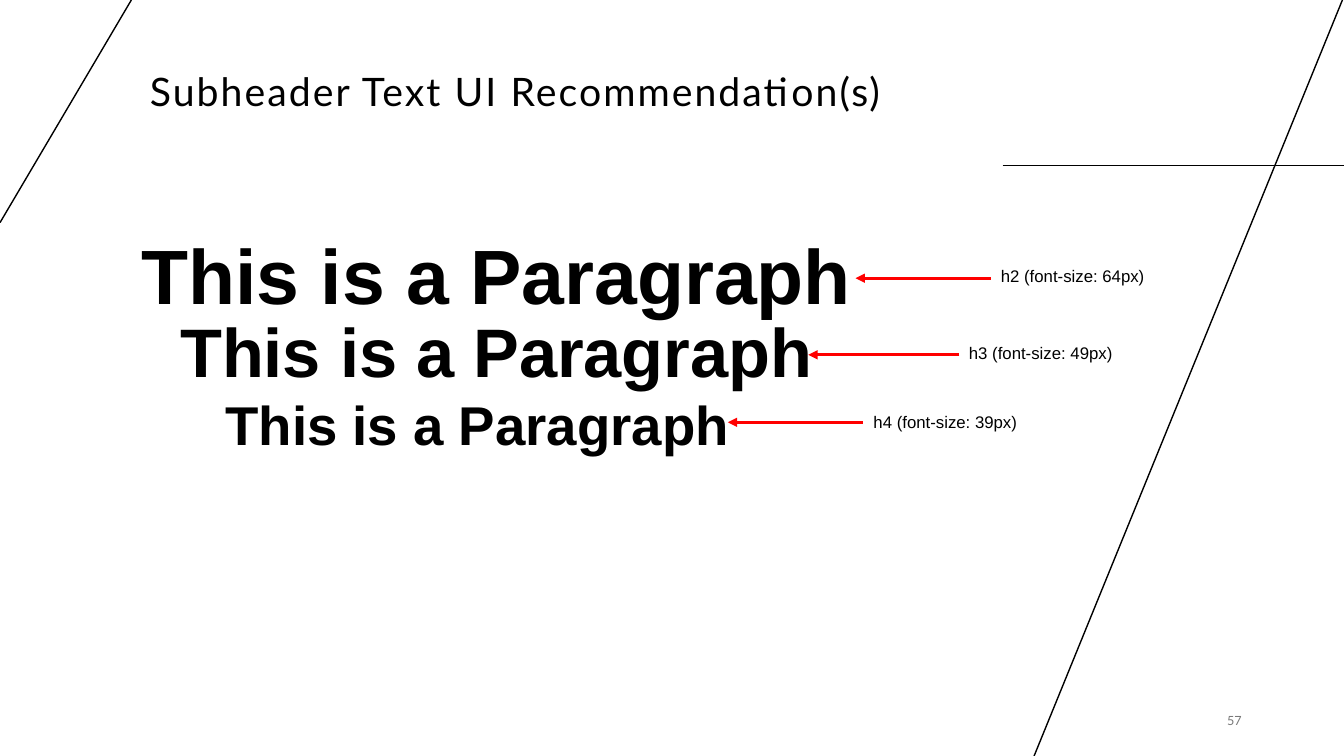
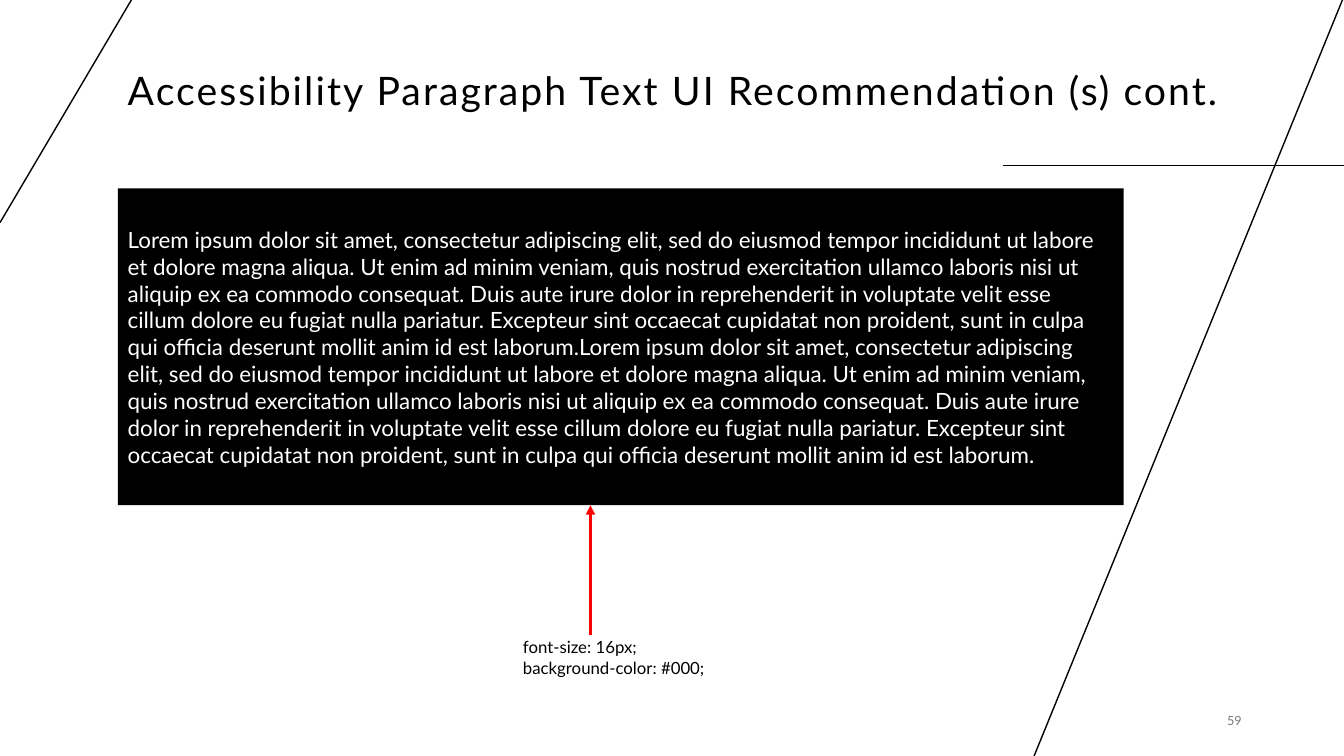
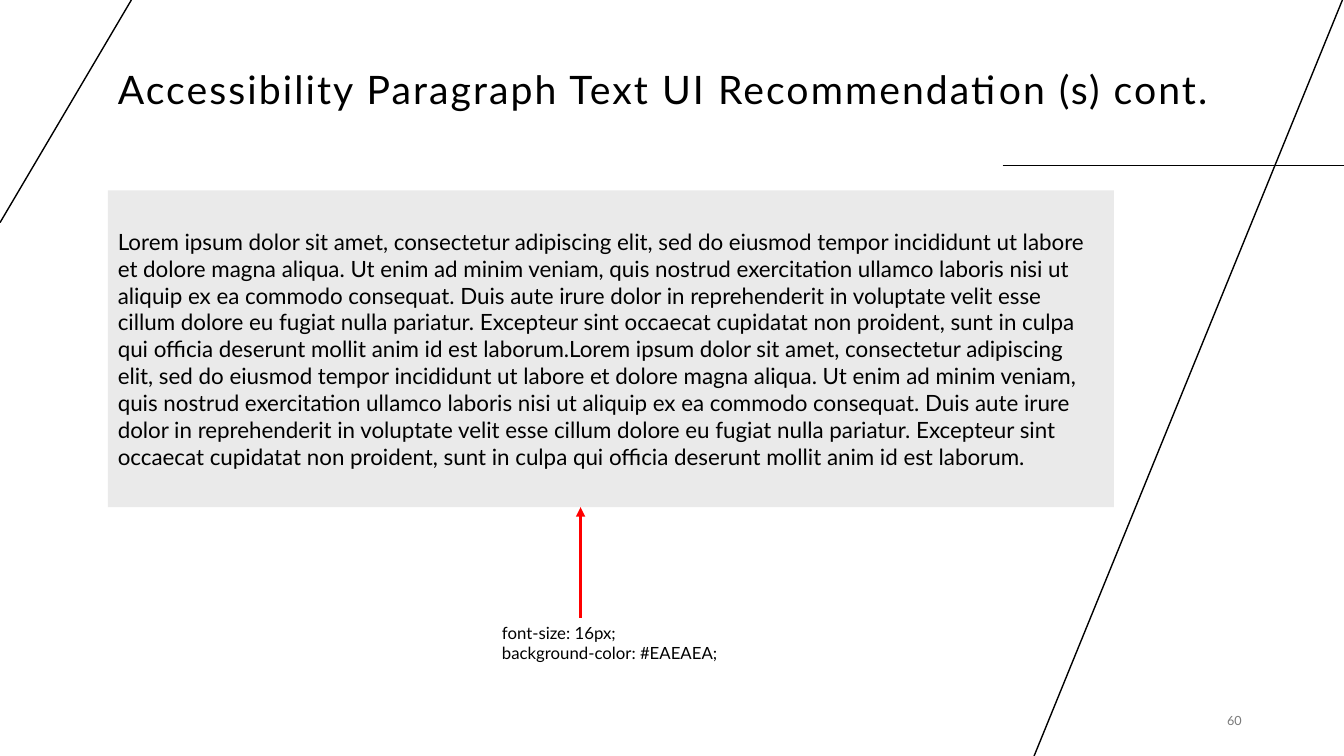
from lxml import etree
from pptx import Presentation
from pptx.dml.color import RGBColor
from pptx.enum.shapes import MSO_CONNECTOR as Connector, MSO_SHAPE as Shape
from pptx.enum.text import MSO_ANCHOR as Anchor, PP_ALIGN as Align
from pptx.oxml.ns import qn
from pptx.util import Cm, Pt

BLACK = RGBColor(0x00, 0x00, 0x00)
WHITE = RGBColor(0xFF, 0xFF, 0xFF)
RED = RGBColor(0xFF, 0x00, 0x00)
GREY = RGBColor(0x79, 0x79, 0x79)
PALE = RGBColor(0xEA, 0xEA, 0xEA)
WIDTH, HEIGHT = 33.87, 19.05

LOREM = (
    "Lorem ipsum dolor sit amet, consectetur adipiscing elit, sed do eiusmod "
    "tempor incididunt ut labore et dolore magna aliqua. Ut enim ad minim veniam, "
    "quis nostrud exercitation ullamco laboris nisi ut aliquip ex ea commodo "
    "consequat. Duis aute irure dolor in reprehenderit in voluptate velit esse "
    "cillum dolore eu fugiat nulla pariatur. Excepteur sint occaecat cupidatat "
    "non proident, sunt in culpa qui officia deserunt mollit anim id est laborum."
)


class Deck:
    """Holds the shared style and the current slide; lengths are centimetres."""

    def __init__(self):
        self.presentation = Presentation()
        self.presentation.slide_width = Cm(WIDTH)
        self.presentation.slide_height = Cm(HEIGHT)
        self.slide = None

    def new_slide(self, title, title_box, number):
        layout = self.presentation.slide_layouts[6]
        self.slide = self.presentation.slides.add_slide(layout)
        # Decorative lines
        self.line((25.27, 4.17), (WIDTH, 4.17))
        self.line((33.83, 0), (26.06, HEIGHT))
        self.line((0, 5.61), (3.31, 0))
        # Title and slide number
        self.text(title_box, [title], 28, anchor=Anchor.BOTTOM,
                  line_spacing=0.9, letter_spacing=1.5)
        self.text((28.8, 17.65, 2.74, 1.02), [str(number)], 9, color=GREY,
                  align=Align.RIGHT, anchor=Anchor.MIDDLE)

    def line(self, start, end, color=BLACK, width=1):
        connector = self.slide.shapes.add_connector(
            Connector.STRAIGHT, *map(Cm, start + end))
        connector.line.color.rgb = color
        connector.line.width = Pt(width)
        etree.SubElement(connector._element.spPr, qn("a:effectLst"))
        return connector

    def arrow(self, start, end):
        connector = self.line(start, end, RED, 2.25)
        outline = connector._element.spPr.find(qn("a:ln"))
        etree.SubElement(outline, qn("a:tailEnd"), type="triangle")

    def text(self, box, lines, size, **style):
        shape = self.slide.shapes.add_textbox(*map(Cm, box))
        self.fill_text(shape, lines, size, **style)

    def panel(self, box, text, fill, color):
        shape = self.slide.shapes.add_shape(Shape.RECTANGLE, *map(Cm, box))
        shape.shadow.inherit = False
        shape.fill.solid()
        shape.fill.fore_color.rgb = fill
        shape.line.fill.background()
        self.fill_text(shape, [text], 16, color=color, anchor=Anchor.MIDDLE)

    def fill_text(self, shape, lines, size, font="Lato", color=BLACK, bold=False,
                  align=Align.LEFT, anchor=Anchor.TOP, line_spacing=None,
                  letter_spacing=None):
        frame = shape.text_frame
        frame.word_wrap = True
        frame.vertical_anchor = anchor
        for index, line in enumerate(lines):
            paragraph = frame.add_paragraph() if index else frame.paragraphs[0]
            paragraph.alignment = align
            if line_spacing:
                paragraph.line_spacing = line_spacing
            run = paragraph.add_run()
            run.text = line
            run.font.name = font
            run.font.size = Pt(size)
            run.font.bold = bold
            run.font.color.rgb = color
            if letter_spacing:
                run._r.get_or_add_rPr().set("spc", str(int(letter_spacing * 100)))


def subheader_slide(deck):
    deck.new_slide("Subheader Text UI Recommendation(s)",
                   (3.53, 1.45, 20.24, 1.57), 57)
    # Heading level, text size, pixels, sample left, label box, arrow start, end
    headings = [
        ("h2", 55, 64, 0.76, (23.77, 6.58, 6.53, 0.76), (24.97, 7.01), (21.56, 7.01)),
        ("h3", 49, 49, 0.76, (23.27, 8.51, 5.92, 0.76), (24.18, 8.94), (20.37, 8.94)),
        ("h4", 39, 39, 0.28, (20.37, 10.24, 6.91, 0.76), (21.74, 10.64), (18.34, 10.64)),
    ]
    for row, (level, size, pixels, left, label, start, end) in enumerate(headings):
        deck.text((left, 5.61 + row * 2.06, 23.5, 2.5), ["This is a Paragraph"],
                  size, font="Arial", bold=True, align=Align.CENTER)
        deck.text(label, [f"{level} (font-size: {pixels}px)"], 12,
                  font="Arial", align=Align.CENTER)
        deck.arrow(start, end)


def paragraph_slide(deck, number, title_box, panel_top, fill, color, code,
                    caption_box, arrow_start):
    deck.new_slide("Accessibility Paragraph Text UI Recommendation (s) cont.",
                   title_box, number)
    left, panel_height = title_box[0], 7.98
    deck.panel((left, panel_top, 25.35, panel_height), LOREM * 2, fill, color)
    # Caption with its arrow up to the panel
    deck.text(caption_box, ["font-size: 16px;", f"background-color: {code};"], 12)
    arrow_x = left + 11.91
    deck.arrow((arrow_x, arrow_start), (arrow_x, panel_top + panel_height))


def main():
    deck = Deck()
    subheader_slide(deck)
    paragraph_slide(deck, 59, (2.97, 1.42, 29.01, 1.57), 4.75, BLACK, WHITE,
                    "#000", (12.93, 15.93, 5.64, 1.3), 16)
    paragraph_slide(deck, 60, (2.72, 1.4, 29.64, 1.57), 4.8, PALE, BLACK,
                    "#EAEAEA", (12.4, 15.57, 9.09, 1.3), 15.57)
    deck.presentation.save("out.pptx")


if __name__ == "__main__":
    main()
